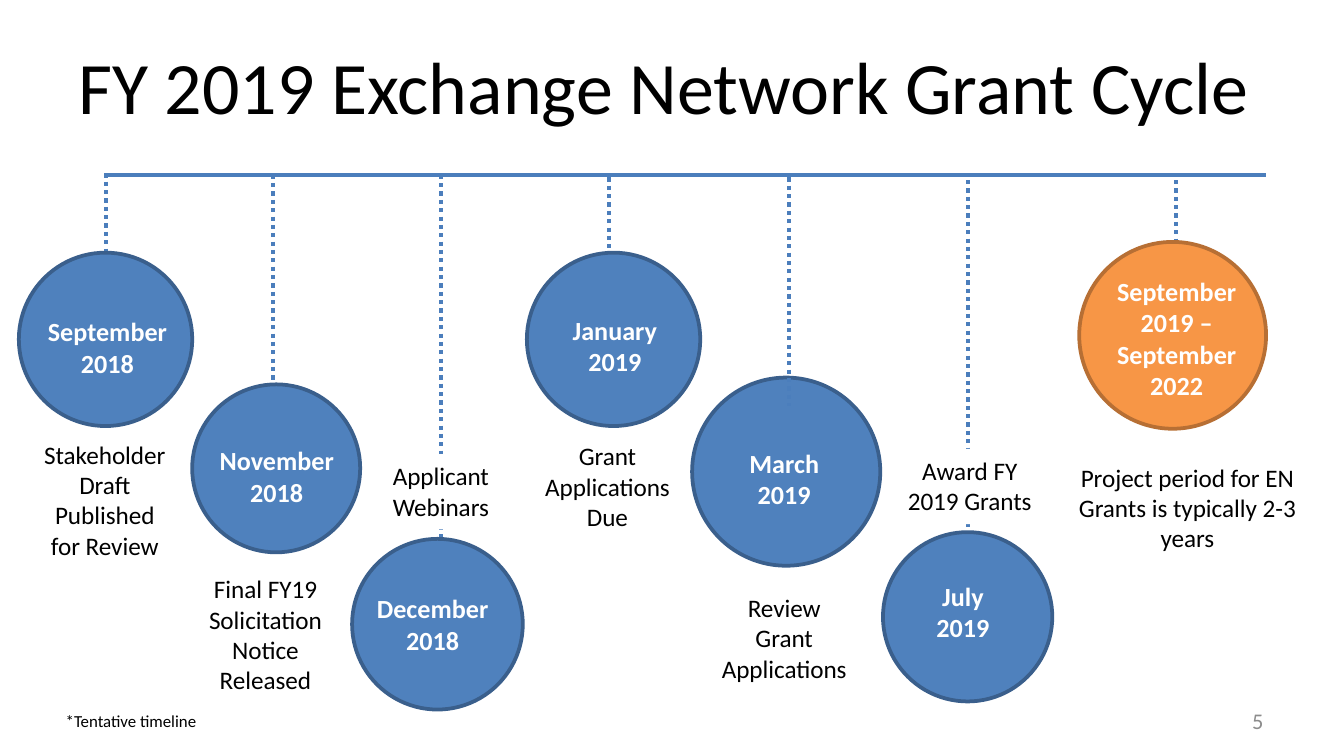
"""Build the grant cycle timeline slide."""
from dataclasses import dataclass

from lxml import etree
from pptx import Presentation
from pptx import util as u
from pptx.dml.color import RGBColor
from pptx.enum import dml, shapes, text
from pptx.oxml import ns


@dataclass(frozen=True)
class Theme:
    """Colours, font and type sizes of the slide."""
    font: str = "Calibri"
    black: str = "000000"
    white: str = "FFFFFF"
    grey: str = "8C8C8C"
    line: str = "4B7EBC"
    blue: tuple = ("4F81BD", "3A5F8C")
    orange: tuple = ("F79646", "B76F34")
    title: float = 39.6
    label: float = 13.5
    date: float = 14
    number: float = 12
    note: float = 9
    line_width: float = 2.25
    outline_width: float = 2


THEME = Theme()
SLIDE_WIDTH = 10
SLIDE_HEIGHT = SLIDE_WIDTH * 9 / 16
AXIS_TOP = 1.3


@dataclass(frozen=True)
class Milestone:
    """One date on the timeline with its stem, circle and label."""
    date: tuple
    date_box: tuple
    circle: tuple
    stem: tuple
    label: str
    label_box: tuple
    colours: tuple = THEME.blue
    masks_stem: bool = False
    stem_in_front: bool = False


MILESTONES = (
    Milestone(("September 2018",), (0.2, 2.3, 1.2, 0.57), (0.14, 1.88, 1.29),
              (0.79, 1.29, 2.03), "Stakeholder Draft Published for Review",
              (0.2, 3.22, 1.16, 1.01)),
    Milestone(("November", "2018"), (1.46, 3.26, 1.2, 0.57), (1.43, 2.86, 1.25),
              (2.03, 1.3, 3), "Final FY19 Solicitation Notice Released",
              (1.43, 4.22, 1.09, 1.01)),
    Milestone(("December", "2018"), (2.67, 4.36, 1.1, 0.57), (2.62, 4.01, 1.27),
              (3.28, 1.3, 4.12), "Applicant Webinars",
              (2.67, 3.38, 1.22, 0.56), masks_stem=True),
    Milestone(("January", "2019"), (4.08, 2.29, 0.99, 0.57), (3.92, 1.88, 1.29),
              (4.53, 1.32, 2.06), "Grant Applications Due",
              (3.88, 3.23, 1.28, 0.78)),
    Milestone(("March", "2019"), (5.34, 3.28, 0.99, 0.59), (5.15, 2.81, 1.4),
              (5.87, 1.32, 3.02), "Review Grant Applications",
              (5.26, 4.36, 1.15, 0.78), stem_in_front=True),
    Milestone(("July", "2019"), (6.67, 4.27, 0.99, 0.57), (6.57, 3.96, 1.26),
              (7.2, 1.34, 4.16), "Award FY 2019 Grants",
              (6.59, 3.34, 1.25, 0.56), masks_stem=True),
    Milestone(("September 2019 – September 2022",), (8.06, 2, 1.39, 1.04),
              (8.03, 1.8, 1.39), (8.75, 1.34, 2.09),
              "Project period for EN Grants is typically 2-3 years",
              (7.92, 3.39, 1.83, 0.78), colours=THEME.orange),
)


def inches(*values):
    """Convert numbers to lengths."""
    return [u.Inches(value) for value in values]


def colour(value):
    """Turn a hex string into a colour."""
    return RGBColor.from_string(value)


def add_text(slide, box, lines, size, ink=THEME.black, bold=False, fill=None,
             align=text.PP_ALIGN.CENTER, anchor=text.MSO_ANCHOR.TOP):
    """Add a wrapped text box with one paragraph for each line."""
    shape = slide.shapes.add_textbox(*inches(*box))
    if fill:
        shape.fill.solid()
        shape.fill.fore_color.rgb = colour(fill)
    frame = shape.text_frame
    frame.word_wrap = True
    frame.vertical_anchor = anchor
    for index, line in enumerate(lines):
        paragraph = frame.add_paragraph() if index else frame.paragraphs[0]
        paragraph.alignment = align
        run = paragraph.add_run()
        run.text = line
        run.font.name = THEME.font
        run.font.size = u.Pt(size)
        run.font.bold = bold
        run.font.color.rgb = colour(ink)


def add_line(slide, start, end, dash=None):
    """Add a straight timeline line."""
    connector = slide.shapes.add_connector(
        shapes.MSO_CONNECTOR.STRAIGHT, *inches(*start, *end))
    connector.line.color.rgb = colour(THEME.line)
    connector.line.width = u.Pt(THEME.line_width)
    if dash:
        connector.line.dash_style = dash
    etree.SubElement(connector._element.spPr, ns.qn("a:effectLst"))


def add_stem(slide, milestone):
    """Add the dotted line that hangs from the axis."""
    left, top, bottom = milestone.stem
    add_line(slide, (left, top), (left, bottom), dml.MSO_LINE.ROUND_DOT)


def add_circle(slide, milestone):
    """Add the outlined circle of a milestone."""
    left, top, diameter = milestone.circle
    fill, outline = milestone.colours
    shape = slide.shapes.add_shape(
        shapes.MSO_SHAPE.OVAL, *inches(left, top, diameter, diameter))
    shape.shadow.inherit = False
    shape.fill.solid()
    shape.fill.fore_color.rgb = colour(fill)
    shape.line.color.rgb = colour(outline)
    shape.line.width = u.Pt(THEME.outline_width)


def add_label(slide, milestone):
    """Add the description of a milestone."""
    add_text(slide, milestone.label_box, [milestone.label], THEME.label,
             fill=THEME.white if milestone.masks_stem else None)


def add_timeline(slide):
    """Add the axis and every milestone, from back to front."""
    add_line(slide, (0.79, AXIS_TOP), (9.42, AXIS_TOP))
    for milestone in MILESTONES:
        if not milestone.stem_in_front:
            add_stem(slide, milestone)
        add_label(slide, milestone)
    for milestone in MILESTONES:
        add_circle(slide, milestone)
        if milestone.stem_in_front:
            add_stem(slide, milestone)
        add_text(slide, milestone.date_box, milestone.date, THEME.date,
                 THEME.white, bold=True)


def main():
    """Build and save the presentation."""
    presentation = Presentation()
    presentation.slide_width = u.Inches(SLIDE_WIDTH)
    presentation.slide_height = u.Inches(SLIDE_HEIGHT)
    slide = presentation.slides.add_slide(presentation.slide_layouts[6])
    add_text(slide, (0, 0.3, SLIDE_WIDTH, 0.66),
             ["FY 2019 Exchange Network Grant Cycle "],
             THEME.title, anchor=text.MSO_ANCHOR.MIDDLE)
    add_timeline(slide)
    add_text(slide, (0.39, 5.24, 1.81, 0.25), ["*Tentative timeline"],
             THEME.note, align=text.PP_ALIGN.LEFT)
    add_text(slide, (7.17, 5.21, 2.33, 0.3), ["5"], THEME.number, THEME.grey,
             align=text.PP_ALIGN.RIGHT, anchor=text.MSO_ANCHOR.MIDDLE)
    presentation.save("out.pptx")


if __name__ == "__main__":
    main()
